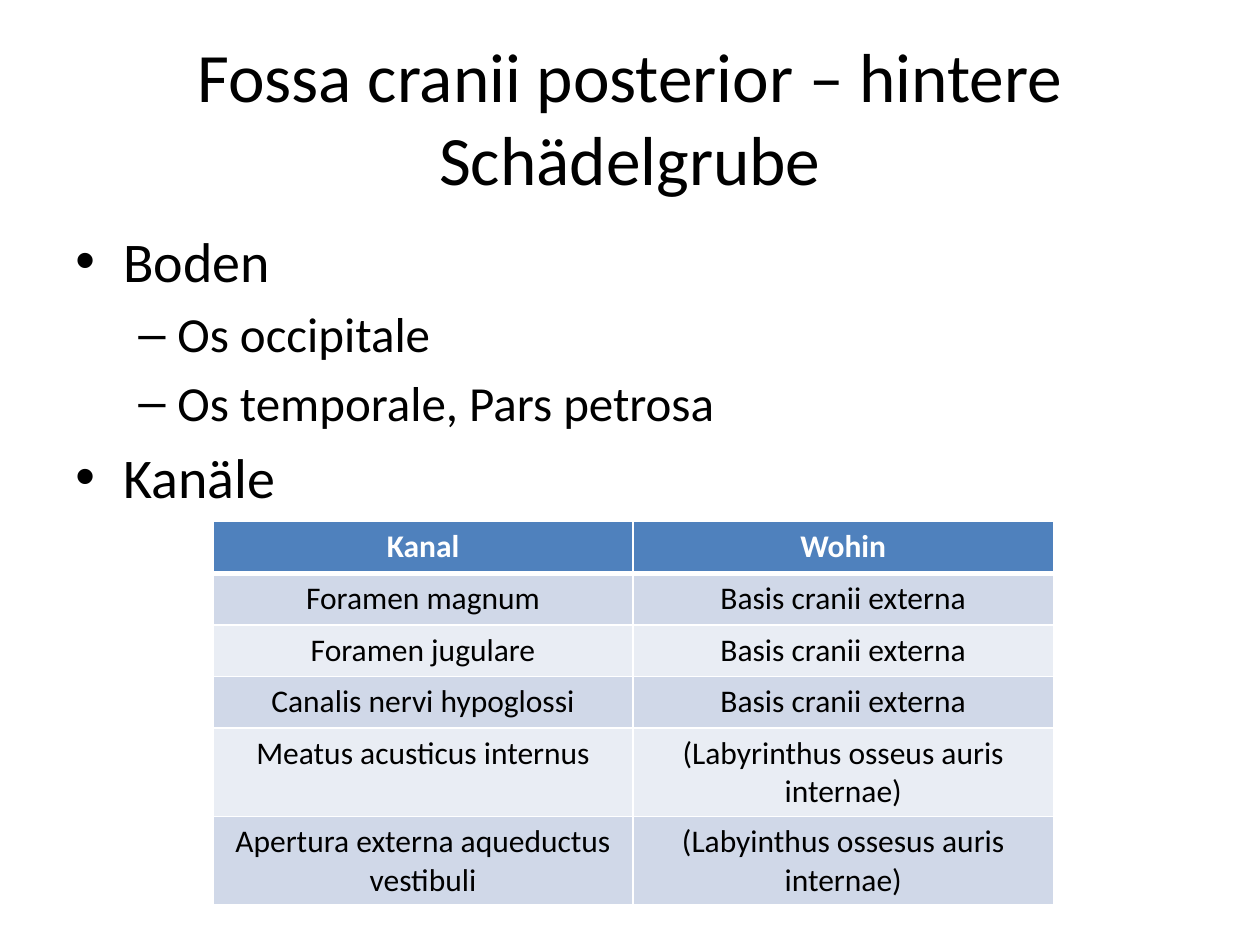
from dataclasses import dataclass

from lxml.etree import SubElement
from pptx import Presentation
from pptx.dml.color import RGBColor
from pptx.enum.text import MSO_ANCHOR, PP_ALIGN
from pptx.oxml import parse_xml
from pptx.oxml.ns import nsdecls, qn
from pptx.util import Inches, Pt


@dataclass(frozen=True)
class Theme:
    font: str = "Calibri"
    bullet_font: str = "Arial"
    ink: str = "000000"
    paper: str = "FFFFFF"
    header: str = "4F81BD"
    bands: tuple = ("D0D8E8", "E9EDF4")
    title_size: float = 39.6
    level_sizes: tuple = (32, 28)
    table_size: float = 18


LEVEL_STYLES = (("•", 0.38, -0.38), ("–", 0.81, -0.31))

OUTLINE = [
    (0, "Boden"),
    (1, "Os occipitale"),
    (1, "Os temporale, Pars petrosa"),
    (0, "Kanäle"),
]

CANALS = [
    ("Kanal", "Wohin"),
    ("Foramen magnum", "Basis cranii externa"),
    ("Foramen jugulare", "Basis cranii externa"),
    ("Canalis nervi hypoglossi", "Basis cranii externa"),
    ("Meatus acusticus internus", "(Labyrinthus osseus auris internae)"),
    ("Apertura externa aqueductus vestibuli", "(Labyinthus ossesus auris internae)"),
]


class SlideBuilder:
    def __init__(self, page, theme):
        self.page = page
        self.theme = theme

    def format_runs(self, para, size, color, bold=False):
        for span in para.runs:
            span.font.name = self.theme.font
            span.font.size = Pt(size)
            span.font.bold = bold
            span.font.color.rgb = RGBColor.from_string(color)

    def title(self, text, left, top, width, height):
        box = self.page.shapes.title
        box.left, box.top = Inches(left), Inches(top)
        box.width, box.height = Inches(width), Inches(height)
        frame = box.text_frame
        frame.text = text
        frame.word_wrap = True
        frame.vertical_anchor = MSO_ANCHOR.MIDDLE
        para = frame.paragraphs[0]
        para.alignment = PP_ALIGN.CENTER
        self.format_runs(para, self.theme.title_size, self.theme.ink)

    def outline(self, items, left, top, width, height):
        box = self.page.shapes.add_textbox(
            Inches(left), Inches(top), Inches(width), Inches(height)
        )
        frame = box.text_frame
        frame.word_wrap = True
        frame.text = "\n".join(text for level, text in items)
        for para, (level, text) in zip(frame.paragraphs, items):
            size = self.theme.level_sizes[level]
            para.level = level
            para.space_before = Pt(size * 0.2)
            self.format_runs(para, size, self.theme.ink)
            self.bullet(para, *LEVEL_STYLES[level])

    def bullet(self, para, symbol, margin, indent):
        properties = para._p.get_or_add_pPr()
        properties.set("marL", str(Inches(margin)))
        properties.set("indent", str(Inches(indent)))
        SubElement(properties, qn("a:buFont"), typeface=self.theme.bullet_font)
        SubElement(properties, qn("a:buChar"), char=symbol)

    def table(self, rows, left, top, width, row_height):
        frame = self.page.shapes.add_table(
            len(rows), len(rows[0]), Inches(left), Inches(top),
            Inches(width), Inches(row_height * len(rows)),
        )
        for row_index, texts in enumerate(rows):
            for column_index, text in enumerate(texts):
                cell = frame.table.cell(row_index, column_index)
                self.cell(cell, text, row_index)

    def cell(self, cell, text, row_index):
        theme = self.theme
        is_header = row_index == 0
        fill = theme.header if is_header else theme.bands[(row_index - 1) % 2]
        cell.text_frame.text = text
        para = cell.text_frame.paragraphs[0]
        para.alignment = PP_ALIGN.CENTER
        color = theme.paper if is_header else theme.ink
        self.format_runs(para, theme.table_size, color, is_header)
        cell.fill.solid()
        cell.fill.fore_color.rgb = RGBColor.from_string(fill)
        top_width = 3 if row_index == 1 else 1
        bottom_width = 3 if is_header else 1
        self.borders(cell, {"L": 1, "R": 1, "T": top_width, "B": bottom_width})

    def borders(self, cell, widths):
        properties = cell._tc.get_or_add_tcPr()
        for position, (side, width) in enumerate(widths.items()):
            line = parse_xml(
                f'<a:ln{side} {nsdecls("a")} w="{Pt(width)}"><a:solidFill>'
                f'<a:srgbClr val="{self.theme.paper}"/></a:solidFill></a:ln{side}>'
            )
            properties.insert(position, line)


def main():
    deck = Presentation()
    deck.slide_width, deck.slide_height = Inches(10), Inches(7.5)
    title_only = deck.slide_layouts.get_by_name("Title Only")
    builder = SlideBuilder(deck.slides.add_slide(title_only), Theme())
    builder.title("Fossa cranii posterior – hintere Schädelgrube", 0.5, 0.3, 9, 1.25)
    builder.outline(OUTLINE, 0.5, 1.75, 9, 4.95)
    builder.table(CANALS, 1.69, 4.14, 6.67, 0.41)
    deck.save("out.pptx")


if __name__ == "__main__":
    main()
